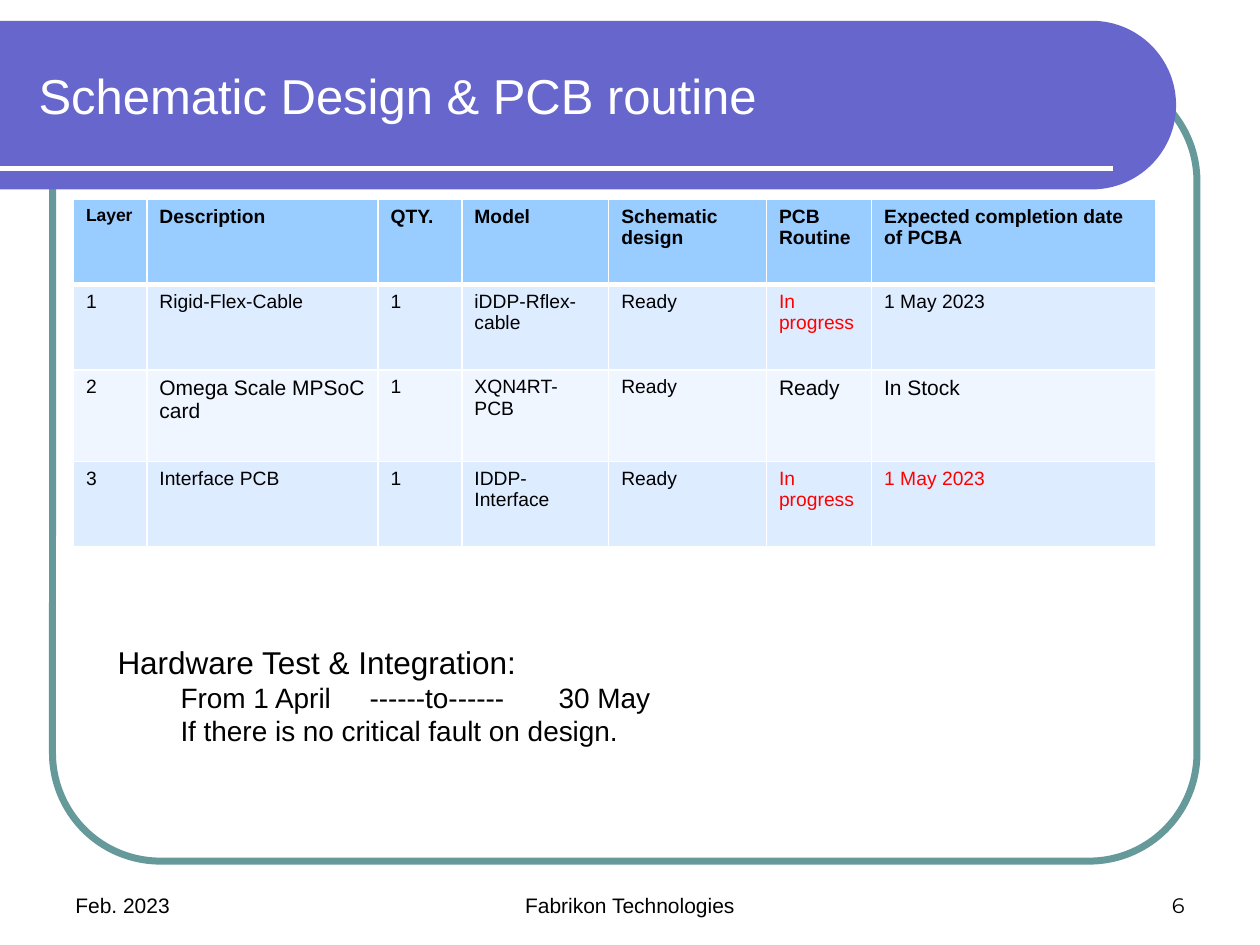
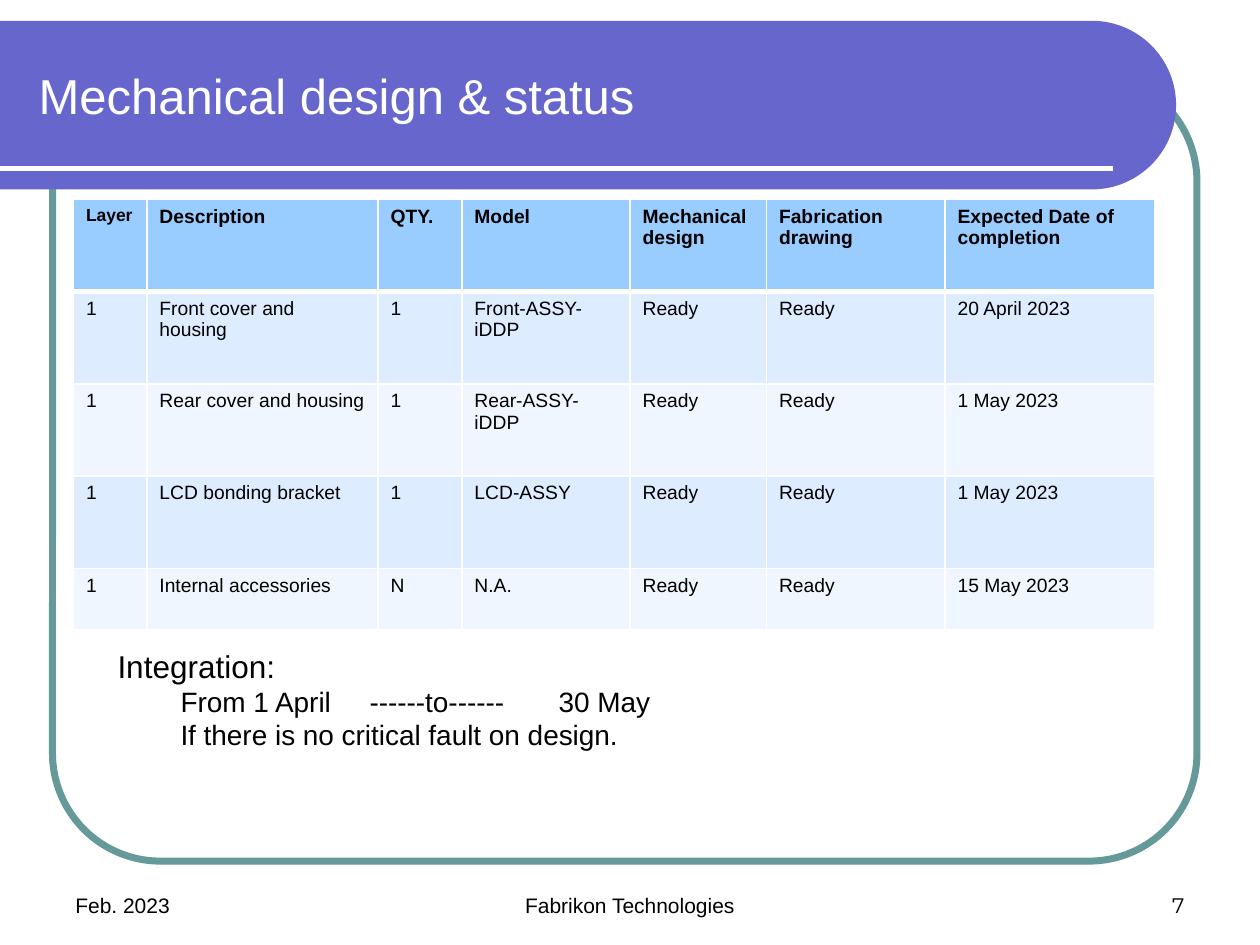
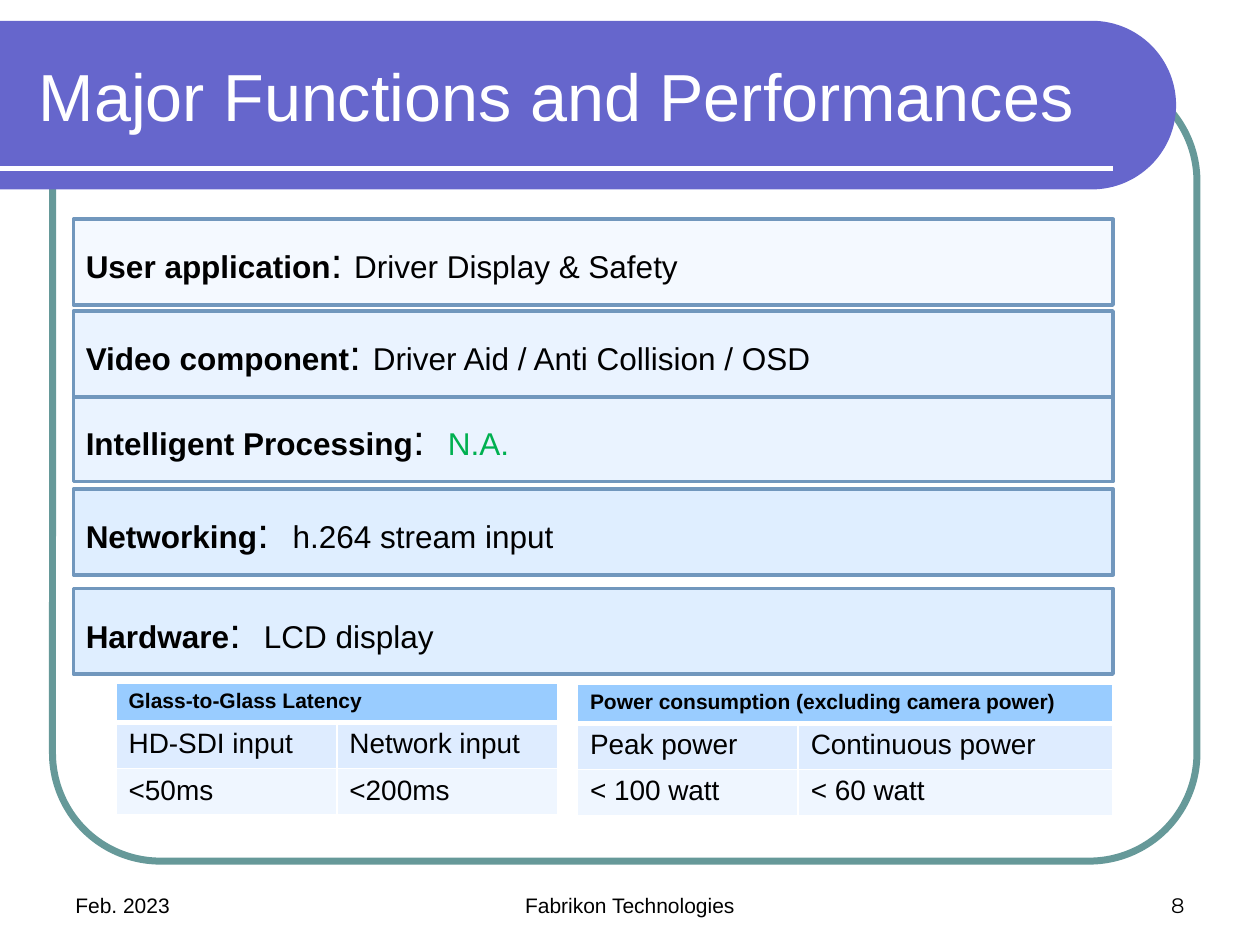
import math
from lxml import etree
from pptx import Presentation
from pptx import util as u
from pptx.dml.color import RGBColor
from pptx.enum import shapes, text
from pptx.oxml.ns import qn

BLACK = RGBColor(0x00, 0x00, 0x00)
WHITE = RGBColor(0xFF, 0xFF, 0xFF)
RED = RGBColor(0xFF, 0x00, 0x00)
GREEN = RGBColor(0x00, 0xB0, 0x50)
VIOLET = RGBColor(0x66, 0x66, 0xCC)
TEAL = RGBColor(0x66, 0x99, 0x99)
STEEL = RGBColor(0x71, 0x97, 0xBD)
HEADER_BLUE = RGBColor(0x99, 0xCC, 0xFF)
ROW_BLUES = [RGBColor(0xDE, 0xEC, 0xFF), RGBColor(0xEF, 0xF6, 0xFF)]
BAR_BLUE = RGBColor(0xDF, 0xEE, 0xFF)
BAR_PALE = RGBColor(0xEA, 0xF3, 0xFF)
BAR_PALEST = RGBColor(0xF4, 0xF9, 0xFF)

FONT = "Arial"
NUMBER_FONT = "Montserrat"
FIRST_NUMBER = 6
DATE = "Feb. 2023"
COMPANY = "Fabrikon Technologies"

SCHEDULE = [
    "From 1 April\t------to------\t30 May",
    "If there is no critical fault on design.",
]
SCHEDULE_TABS = [4.77, 8.09]

STATUS_SLIDES = [
    {
        "title": "Schematic Design & PCB routine",
        "widths": [1.48, 4.66, 1.69, 2.96, 3.18, 2.12, 5.72],
        "heights": [1.72, 1.72, 1.84, 1.72],
        "rows": [
            [("Layer", 10), "Description", "QTY.", "Model", "Schematic design", "PCB Routine",
             "Expected completion date of PCBA"],
            ["1", "Rigid-Flex-Cable", "1", "iDDP-Rflex-cable", "Ready",
             ("In progress", 11, RED), "1 May 2023"],
            ["2", ("Omega Scale MPSoC card", 12), "1", "XQN4RT-PCB", "Ready",
             ("Ready", 12), ("In Stock", 12)],
            ["3", "Interface PCB", "1", "IDDP-Interface", "Ready",
             ("In progress", 11, RED), ("1 May 2023", 11, RED)],
        ],
        "note": "Hardware Test & Integration:",
        "note_top": 12.83,
    },
    {
        "title": "Mechanical design & status",
        "widths": [1.48, 4.66, 1.69, 3.39, 2.75, 3.6, 4.23],
        "heights": [1.86, 1.86, 1.86, 1.86, 1.23],
        "rows": [
            [("Layer", 10), "Description", "QTY.", "Model", "Mechanical design",
             "Fabrication drawing", "Expected Date of completion"],
            ["1", "Front cover and housing", "1", "Front-ASSY-iDDP", "Ready", "Ready",
             "20 April 2023"],
            ["1", "Rear cover and housing", "1", "Rear-ASSY-iDDP", "Ready", "Ready",
             "1 May 2023"],
            ["1", "LCD bonding bracket", "1", "LCD-ASSY", "Ready", "Ready", "1 May 2023"],
            ["1", "Internal accessories", "N", "N.A.", "Ready", "Ready", "15 May 2023"],
        ],
        "note": "Integration:",
        "note_top": 12.91,
    },
]

FUNCTIONS_TITLE = "Major Functions and Performances"
FUNCTION_BARS = [
    (4.42, BAR_PALEST, "User application", "Driver Display & Safety", BLACK, None),
    (6.27, BAR_PALE, "Video component", "Driver Aid / Anti Collision / OSD", BLACK, None),
    (7.98, BAR_PALE, "Intelligent Processing", "N.A.", GREEN, 7.3),
    (9.86, BAR_BLUE, "Networking", "h.264 stream input", BLACK, 4.17),
    (11.86, BAR_BLUE, "Hardware", "LCD display", BLACK, 3.59),
]
PERFORMANCE_HEIGHTS = [0.79, 0.86, 0.86]
PERFORMANCE_TABLES = [
    (2.34, 13.77, [4.45, 4.45], [
        [("Glass-to-Glass Latency", 12)],
        ["HD-SDI input", "Network input"],
        ["<50ms", "<200ms"],
    ]),
    (11.64, 13.79, [4.45, 6.35], [
        [("Power consumption (excluding camera power)", 12)],
        ["Peak power", "Continuous power"],
        ["< 100 watt", "< 60 watt"],
    ]),
]


def style_font(font, size, color=BLACK, bold=False, name=FONT):
    font.name = name
    font.size = u.Pt(size)
    font.bold = bold
    font.color.rgb = color


def set_tabs(paragraph, positions):
    tab_list = etree.SubElement(paragraph._p.get_or_add_pPr(), qn("a:tabLst"))
    for position in positions:
        etree.SubElement(tab_list, qn("a:tab"), pos=str(u.Cm(position)), algn="l")


def add_text(slide, box, words, size, color=BLACK, anchor=text.MSO_ANCHOR.MIDDLE,
             align=text.PP_ALIGN.LEFT, name=FONT):
    frame = slide.shapes.add_textbox(*map(u.Cm, box)).text_frame
    frame.word_wrap = True
    frame.vertical_anchor = anchor
    paragraph = frame.paragraphs[0]
    paragraph.text = words
    paragraph.alignment = align
    style_font(paragraph.font, size, color, name=name)
    return frame


def add_background(slide):
    border = slide.shapes.add_shape(shapes.MSO_SHAPE.ROUNDED_RECTANGLE,
                                    *map(u.Cm, (1.06, 1.48, 23.07, 15.88)))
    border.adjustments[0] = 0.137
    border.shadow.inherit = False
    border.fill.background()
    border.line.color.rgb = TEAL
    border.line.width = u.Pt(4)

    center_x, center_y, radius = 22.01, 2.12, 1.7
    angles = [math.radians(degree) for degree in range(-90, 91, 3)]
    arc = [(u.Cm(center_x + radius * math.cos(angle)), u.Cm(center_y + radius * math.sin(angle)))
           for angle in angles]
    builder = slide.shapes.build_freeform(0, u.Cm(center_y - radius))
    builder.add_line_segments(arc + [(0, u.Cm(center_y + radius))], close=True)
    band = builder.convert_to_shape()
    band.shadow.inherit = False
    band.fill.solid()
    band.fill.fore_color.rgb = VIOLET
    band.line.fill.background()

    rule = slide.shapes.add_connector(shapes.MSO_CONNECTOR.STRAIGHT,
                                      0, u.Cm(3.39), u.Cm(22.44), u.Cm(3.39))
    rule.line.color.rgb = WHITE
    rule.line.width = u.Pt(3)
    etree.SubElement(rule._element.spPr, qn("a:effectLst"))


def add_footers(slide, number):
    footers = [
        (1.27, 5.93, DATE, text.PP_ALIGN.LEFT, FONT),
        (8.68, 8.04, COMPANY, text.PP_ALIGN.CENTER, FONT),
        (18.2, 5.93, str(number), text.PP_ALIGN.RIGHT, NUMBER_FONT),
    ]
    for left, width, words, align, name in footers:
        add_text(slide, (left, 17.36, width, 1.27), words, 12,
                 anchor=text.MSO_ANCHOR.BOTTOM, align=align, name=name)


def start_slide(presentation, title, title_size=28, title_width=22.28):
    slide = presentation.slides.add_slide(presentation.slide_layouts[6])
    add_background(slide)
    add_footers(slide, FIRST_NUMBER + len(presentation.slides) - 1)
    add_text(slide, (0.53, 0.64, title_width, 2.54), title, title_size, WHITE)
    return slide


def set_borders(cell, top, bottom):
    properties = cell._tc.get_or_add_tcPr()
    sides = [("a:lnL", 1), ("a:lnR", 1), ("a:lnT", top), ("a:lnB", bottom)]
    for index, (tag, width) in enumerate(sides):
        line = etree.Element(qn(tag), w=str(u.Pt(width)))
        fill = etree.SubElement(line, qn("a:solidFill"))
        etree.SubElement(fill, qn("a:srgbClr"), val=str(WHITE))
        properties.insert(index, line)


def add_grid(slide, left, top, widths, heights, rows, size):
    table = slide.shapes.add_table(
        len(rows), len(widths), u.Cm(left), u.Cm(top),
        u.Cm(sum(widths)), u.Cm(sum(heights))).table
    for column, width in zip(table.columns, widths):
        column.width = u.Cm(width)
    for row_index, (row, height) in enumerate(zip(rows, heights)):
        table.rows[row_index].height = u.Cm(height)
        is_header = row_index == 0
        for column_index in range(len(widths)):
            cell = table.cell(row_index, column_index)
            cell.fill.solid()
            cell.fill.fore_color.rgb = HEADER_BLUE if is_header else ROW_BLUES[(row_index - 1) % 2]
            set_borders(cell, 3 if row_index == 1 else 1, 3 if is_header else 1)
        for column_index, content in enumerate(row):
            words, *look = (content, size) if isinstance(content, str) else content
            paragraph = table.cell(row_index, column_index).text_frame.paragraphs[0]
            paragraph.text = words
            style_font(paragraph.font, *look, bold=is_header)
        if len(row) < len(widths):
            table.cell(row_index, 0).merge(table.cell(row_index, len(widths) - 1))


def add_schedule(slide, top, heading):
    frame = add_text(slide, (2.12, top, 20.7, 2.39), heading, 18, anchor=text.MSO_ANCHOR.TOP)
    for words in SCHEDULE:
        paragraph = frame.add_paragraph()
        paragraph.text = words
        properties = paragraph._p.get_or_add_pPr()
        properties.set("marL", "0")
        properties.set("indent", str(u.Cm(1.27)))
        set_tabs(paragraph, SCHEDULE_TABS)
        style_font(paragraph.font, 16)


def add_function_bar(slide, top, fill, name, value, value_color, value_tab):
    bar = slide.shapes.add_shape(shapes.MSO_SHAPE.RECTANGLE,
                                 *map(u.Cm, (1.48, top, 20.96, 1.73)))
    bar.shadow.inherit = False
    bar.fill.solid()
    bar.fill.fore_color.rgb = fill
    bar.line.color.rgb = STEEL
    bar.line.width = u.Pt(2)
    bar.text_frame.vertical_anchor = text.MSO_ANCHOR.MIDDLE
    paragraph = bar.text_frame.paragraphs[0]
    paragraph.alignment = text.PP_ALIGN.LEFT
    if value_tab:
        set_tabs(paragraph, [value_tab])
    parts = [
        (name, 18, BLACK, True),
        (":\t" if value_tab else ": ", 24, BLACK, False),
        (value, 18, value_color, False),
    ]
    for words, *look in parts:
        run = paragraph.add_run()
        run.text = words
        style_font(run.font, *look)


def main():
    presentation = Presentation()
    presentation.slide_width = u.Cm(25.4)
    presentation.slide_height = u.Cm(19.05)

    for status in STATUS_SLIDES:
        slide = start_slide(presentation, status["title"])
        add_grid(slide, 1.48, 4.02, status["widths"], status["heights"], status["rows"], 11)
        add_schedule(slide, status["note_top"], status["note"])

    slide = start_slide(presentation, FUNCTIONS_TITLE, 38, 23.16)
    for bar in reversed(FUNCTION_BARS):
        add_function_bar(slide, *bar)
    for left, top, widths, rows in PERFORMANCE_TABLES:
        add_grid(slide, left, top, widths, PERFORMANCE_HEIGHTS, rows, 16)

    presentation.save("out.pptx")


if __name__ == "__main__":
    main()
